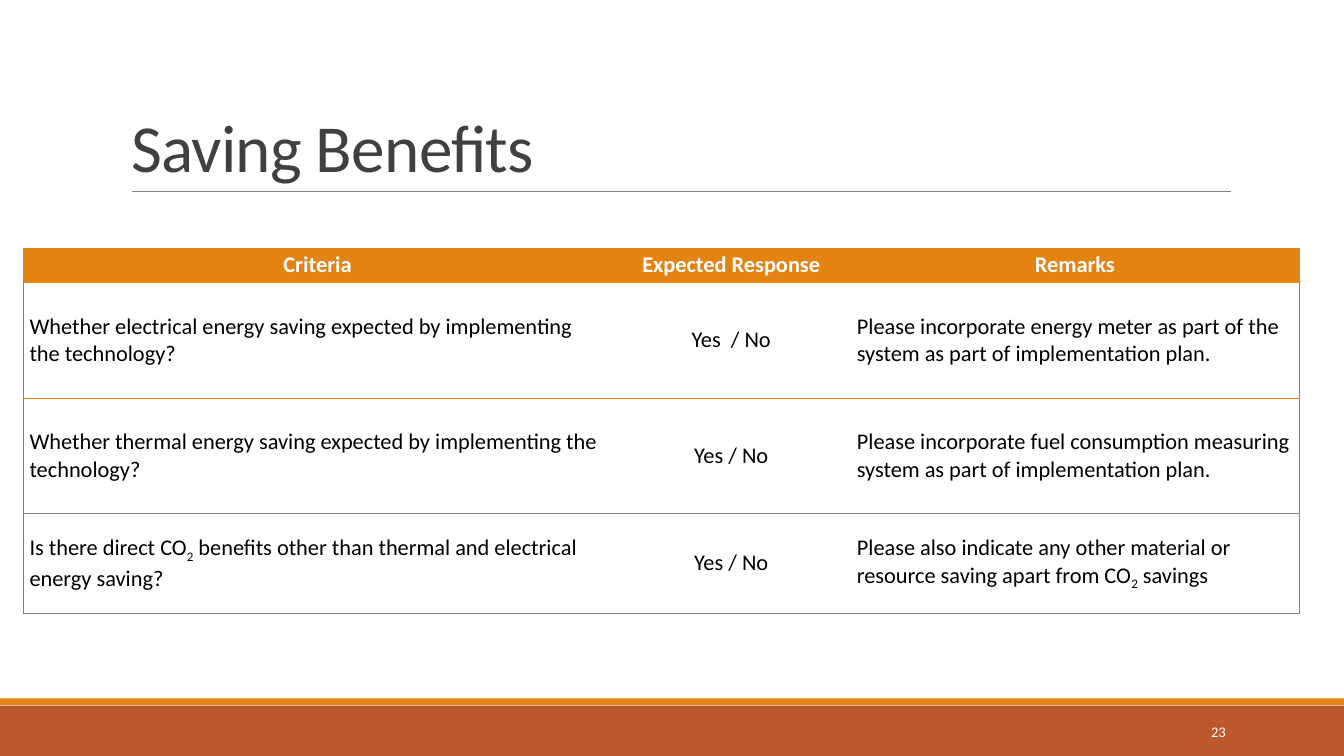
from pptx import Presentation
from pptx.dml.color import RGBColor
from pptx.enum import shapes, text
from pptx.oxml import ns, parse_xml
from pptx.util import Pt

ORANGE = RGBColor(0xE4, 0x83, 0x12)
RUST = RGBColor(0xBD, 0x58, 0x2C)
GREY = RGBColor(0x80, 0x80, 0x80)
DARK = RGBColor(0x40, 0x40, 0x40)
BLACK = RGBColor(0, 0, 0)
WHITE = RGBColor(0xFF, 0xFF, 0xFF)

LEFT, MID, RIGHT = text.PP_ALIGN.LEFT, text.PP_ALIGN.CENTER, text.PP_ALIGN.RIGHT
PLAIN = "{2D5ABB26-0587-4C30-8999-92F81FD0307C}"  # table style without grid
COLS = (420.5, 170.5, 320.5)
ROWS = (24.5, 82.8, 82.2, 71.3)

# Text between bars is subscript
CELLS = (
    ("Criteria", "Expected Response", "Remarks"),
    ("Whether electrical energy saving expected by implementing the technology?",
     "Yes  / No",
     "Please incorporate energy meter as part of the system as part of implementation plan."),
    ("Whether thermal energy saving expected by implementing the technology?",
     "Yes / No",
     "Please incorporate fuel consumption measuring system as part of implementation plan."),
    ("Is there direct CO|2| benefits other than thermal and electrical energy saving?",
     "Yes / No",
     "Please also indicate any other material or resource saving apart from CO|2| savings"),
)


def apply(item, form):
    for name, value in form.items():
        setattr(item, name, value)


def write(frame, words, size, color, align, bold=False):
    para = frame.paragraphs[0]
    para.alignment = align
    for i, part in enumerate(words.split("|")):
        run = para.add_run()
        run.text = part
        apply(run.font, {"name": "Calibri", "size": Pt(size), "bold": bold})
        run.font.color.rgb = color
        if i % 2:
            run.font._element.set("baseline", "-25000")
    return para


def add_bar(slide, top, height, color):
    bar = slide.shapes.add_shape(
        shapes.MSO_SHAPE.RECTANGLE, 0, Pt(top), Pt(960), Pt(height))
    bar.shadow.inherit = False
    bar.fill.solid()
    bar.fill.fore_color.rgb = color
    bar.line.fill.background()


def add_rule(slide, left, right, y):
    rule = slide.shapes.add_connector(
        shapes.MSO_CONNECTOR.STRAIGHT, Pt(left), Pt(y), Pt(right), Pt(y))
    rule.line.color.rgb = GREY
    rule.line.width = Pt(0.5)
    rule._element.spPr.append(parse_xml(f"<a:effectLst {ns.nsdecls('a')}/>"))


def add_title(slide, words):
    title = slide.shapes.title
    apply(title, {"left": Pt(86.4), "top": Pt(22.6), "width": Pt(792), "height": Pt(114.2)})
    apply(title.text_frame, {"vertical_anchor": text.MSO_ANCHOR.BOTTOM,
                             "auto_size": text.MSO_AUTO_SIZE.NONE, "word_wrap": True})
    para = write(title.text_frame, words, 48, DARK, LEFT)
    para.line_spacing = 0.85
    para.runs[0].font._element.set("spc", "-50")


def add_number(slide, words):
    box = slide.shapes.add_textbox(Pt(780), Pt(508.3), Pt(102.7), Pt(28.8))
    apply(box.text_frame, {"word_wrap": True, "vertical_anchor": text.MSO_ANCHOR.MIDDLE})
    write(box.text_frame, words, 10.5, WHITE, RIGHT)


def add_edge(cell, side, color, width):
    cell._tc.get_or_add_tcPr().append(parse_xml(
        f"<a:ln{side} {ns.nsdecls('a')} w='{Pt(width)}'><a:solidFill>"
        f"<a:srgbClr val='{color}'/></a:solidFill></a:ln{side}>"))


def add_grid(slide):
    frame = slide.shapes.add_table(len(ROWS), len(COLS), Pt(16.6), Pt(177.2),
                                   Pt(sum(COLS)), Pt(sum(ROWS)))
    table = frame.table
    table._tbl.tblPr.find(ns.qn("a:tableStyleId")).text = PLAIN
    for col, width in zip(table.columns, COLS):
        col.width = Pt(width)
    for row, height in zip(table.rows, ROWS):
        row.height = Pt(height)

    for r, line in enumerate(CELLS):
        head = r == 0
        for c, words in enumerate(line):
            cell = table.cell(r, c)
            apply(cell, {"margin_left": Pt(4.5), "margin_right": Pt(4.5),
                         "margin_top": 0, "margin_bottom": 0,
                         "vertical_anchor": text.MSO_ANCHOR.MIDDLE})
            # Outer sides, then the line under each row
            side = ORANGE if head else GREY
            if c == 0:
                add_edge(cell, "L", side, 0.5)
            if c == len(COLS) - 1:
                add_edge(cell, "R", side, 0.5)
            if r > 0:
                add_edge(cell, "T", ORANGE if r < 3 else GREY, 1 if r < 3 else 0.5)
            add_edge(cell, "B", ORANGE if r < 2 else GREY, 1 if r < 2 else 0.5)
            cell.fill.solid()
            cell.fill.fore_color.rgb = ORANGE if head else WHITE
            write(cell.text_frame, words, 16, WHITE if head else BLACK,
                  MID if head or c == 1 else LEFT, head)
            if r == 2:
                cell._tc.tcPr.find(ns.qn("a:lnT")).find(ns.qn("a:solidFill"))


def main():
    deck = Presentation()
    apply(deck, {"slide_width": Pt(960), "slide_height": Pt(540)})
    slide = deck.slides.add_slide(deck.slide_layouts[5])

    # Footer bars and title rule
    add_bar(slide, 504, 36, RUST)
    add_bar(slide, 498.8, 5, ORANGE)
    add_rule(slide, 94.3, 879, 136.6)

    # Content
    add_title(slide, "Saving Benefits")
    add_grid(slide)
    add_number(slide, "23")
    deck.save("out.pptx")


if __name__ == "__main__":
    main()
